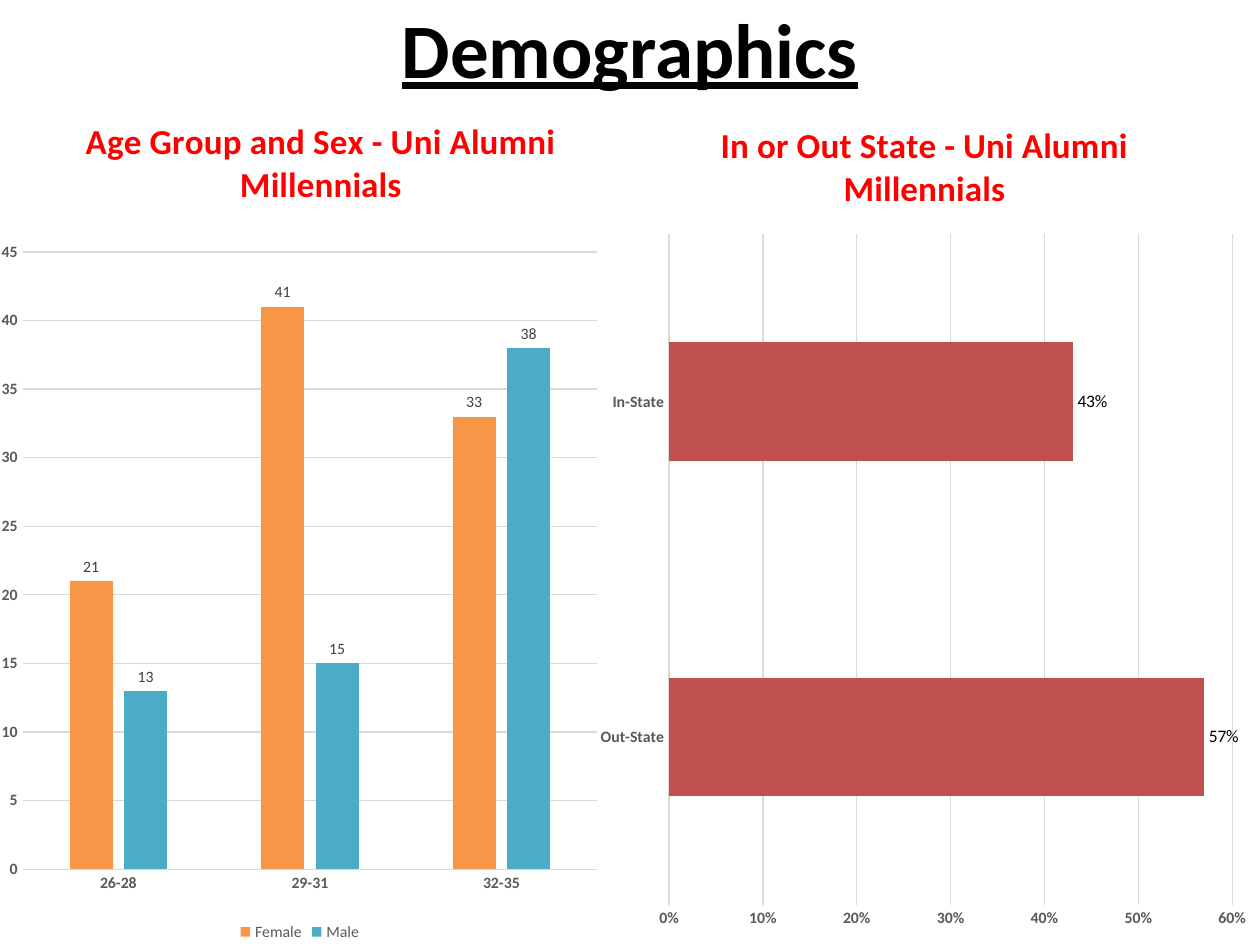
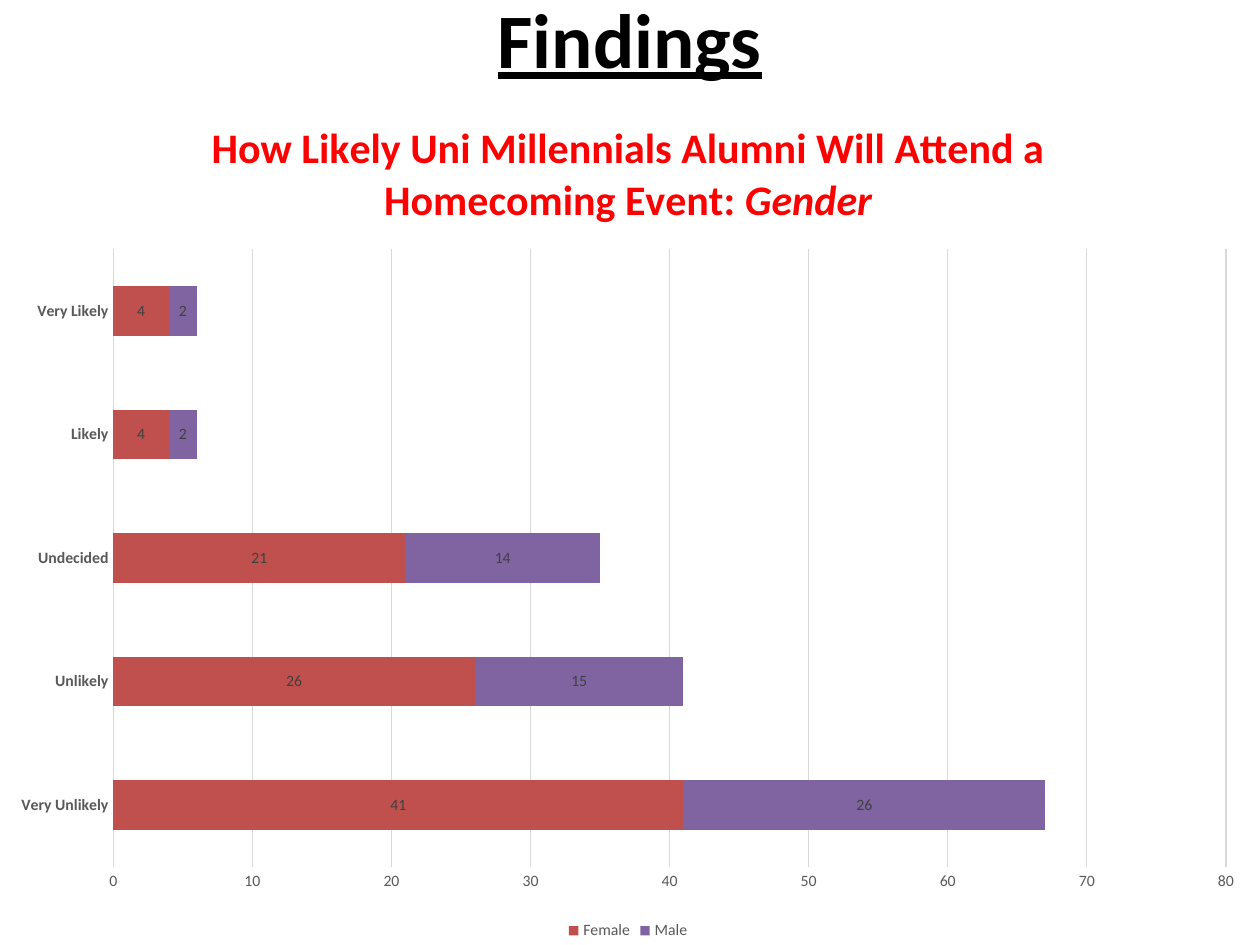
from lxml.etree import SubElement
from pptx import Presentation
from pptx.chart.data import CategoryChartData
from pptx.dml.color import RGBColor
from pptx.enum.chart import XL_CHART_TYPE as ChartType
from pptx.enum.chart import XL_LABEL_POSITION as LabelPosition
from pptx.enum.chart import XL_LEGEND_POSITION as LegendPosition
from pptx.enum.chart import XL_TICK_MARK as TickMark
from pptx.enum.text import MSO_ANCHOR as Anchor
from pptx.enum.text import PP_ALIGN as Align
from pptx.oxml.ns import qn
from pptx.util import Inches, Pt

FONT = "Calibri"
BLACK, RED, GRID = "000000", "FF0000", "D9D9D9"
AXIS_TEXT, LABEL_TEXT = "595959", "404040"
ORANGE, TEAL, BRICK, PURPLE = "F79646", "4BACC6", "C0504D", "8064A2"

HEADING = {"size": Pt(44), "bold": True, "underline": True}
AXIS = {"size": Pt(9), "bold": True}
SMALL = {"size": Pt(9), "bold": False}
BODY = {"size": Pt(10), "bold": False}


def rgb(hex_color):
    return RGBColor.from_string(hex_color)


def style_font(font, color, formats):
    for attribute, value in {"name": FONT, **formats}.items():
        setattr(font, attribute, value)
    font.color.rgb = rgb(color)


def style_line(line, color):
    line.color.rgb = rgb(color)
    line.width = Pt(0.75)


def add_heading(slide, text, top):
    frame = slide.shapes.add_textbox(
        Inches(0.5), Inches(top), Inches(9), Inches(1.25)
    ).text_frame
    frame.word_wrap = True
    frame.vertical_anchor = Anchor.MIDDLE
    paragraph = frame.paragraphs[0]
    paragraph.alignment = Align.CENTER
    run = paragraph.add_run()
    run.text = text
    style_font(run.font, BLACK, HEADING)


def set_layout(parent, index, values):
    for old in parent.findall(qn("c:layout")):
        parent.remove(old)
    layout = SubElement(parent, qn("c:layout"))
    manual = SubElement(layout, qn("c:manualLayout"))
    for tag, value in values.items():
        SubElement(manual, qn(f"c:{tag}")).set("val", str(value))
    parent.insert(index, layout)


def place_plot(chart, box, plot):
    left, top, width, height = box
    x, y, w, h = plot
    set_layout(chart.plots[0]._element.getparent(), 0, {
        "layoutTarget": "inner", "xMode": "edge", "yMode": "edge",
        "x": (x - left) / width, "y": (y - top) / height,
        "w": w / width, "h": h / height,
    })


def place_title(chart, box, corner):
    left, top, width, height = box
    set_layout(chart.chart_title._element, 1, {
        "xMode": "edge", "yMode": "edge",
        "x": (corner[0] - left) / width, "y": (corner[1] - top) / height,
    })


def add_chart_title(chart, text, size, emphasis=""):
    chart.has_title = True
    chart.chart_title.include_in_layout = False
    paragraph = chart.chart_title.text_frame.paragraphs[0]
    for part, italic in ((text, False), (emphasis, True)):
        if part:
            run = paragraph.add_run()
            run.text = part
            style_font(run.font, RED,
                       {"size": Pt(size), "bold": True, "italic": italic})


def style_axes(chart, maximum, step, number_format, value_font):
    for axis, formats in ((chart.category_axis, AXIS),
                          (chart.value_axis, value_font)):
        axis.major_tick_mark = axis.minor_tick_mark = TickMark.NONE
        style_font(axis.tick_labels.font, AXIS_TEXT, formats)
    style_line(chart.category_axis.format.line, GRID)
    chart.category_axis.has_major_gridlines = False

    scale = chart.value_axis
    scale.minimum_scale, scale.maximum_scale = 0, maximum
    scale.major_unit = step
    scale.format.line.fill.background()
    scale.has_major_gridlines = True
    style_line(scale.major_gridlines.format.line, GRID)
    scale.tick_labels.number_format = number_format
    scale.tick_labels.number_format_is_linked = False


def add_legend(chart):
    chart.has_legend = True
    chart.legend.position = LegendPosition.BOTTOM
    chart.legend.include_in_layout = False
    style_font(chart.legend.font, AXIS_TEXT, SMALL)


def add_bars(slide, kind, box, plot_box, categories, groups, gap, overlap,
             label_position, maximum, step, number_format="General",
             value_font=AXIS, label_color=LABEL_TEXT, label_font=SMALL):
    data = CategoryChartData(number_format=number_format)
    data.categories = categories
    for name, values, _ in groups:
        data.add_series(name, values)
    chart = slide.shapes.add_chart(kind, *map(Inches, box), data).chart
    style_font(chart.font, BLACK, BODY)
    style_axes(chart, maximum, step, number_format, value_font)
    place_plot(chart, box, plot_box)

    plot = chart.plots[0]
    plot.vary_by_categories = False
    plot.gap_width, plot.overlap = gap, overlap
    for series, (_, _, color) in zip(plot.series, groups):
        series.format.fill.solid()
        series.format.fill.fore_color.rgb = rgb(color)
        labels = series.data_labels
        labels.show_value = True
        labels.position = label_position
        labels.number_format = number_format
        labels.number_format_is_linked = False
        style_font(labels.font, label_color, label_font)

    chart.has_legend = False
    if len(groups) > 1:
        add_legend(chart)
    return chart


def add_age_chart(slide):
    box = (-0.08, 0.75, 4.92, 6.76)
    chart = add_bars(
        slide, ChartType.COLUMN_CLUSTERED, box, (0.18, 2, 4.56, 4.9),
        ["26-28", "29-31", "32-35"],
        [("Female", (21, 41, 33), ORANGE), ("Male", (13, 15, 38), TEAL)],
        219, -27, LabelPosition.OUTSIDE_END, 45, 5,
    )
    add_chart_title(chart, "Age Group and Sex - Uni Alumni Millennials", 20)
    place_title(chart, box, (0.63, 0.87))


def add_state_chart(slide):
    box = (4.67, 0.75, 5.33, 6.75)
    chart = add_bars(
        slide, ChartType.BAR_CLUSTERED, box,
        (5.31, 1.86, 4.47, 5.32), ["Out-State", "In-State"],
        [("Series 1", (0.57, 0.43), BRICK)],
        182, 0, LabelPosition.OUTSIDE_END, 0.6, 0.1, "0%",
        label_color=BLACK, label_font=BODY,
    )
    add_chart_title(chart, "In or Out State - Uni Alumni Millennials", 20)
    place_title(chart, box, (5.67, 0.9))


def add_attendance_chart(slide):
    chart = add_bars(
        slide, ChartType.BAR_STACKED, (-0.03, 0.75, 10.03, 6.75),
        (0.9, 1.98, 8.83, 4.9),
        ["Very Unlikely", "Unlikely", "Undecided", "Likely", "Very Likely"],
        [("Female", (41, 26, 21, 4, 4), BRICK),
         ("Male", (26, 15, 14, 2, 2), PURPLE)],
        150, 100, LabelPosition.CENTER, 80, 10, value_font=SMALL,
    )
    add_chart_title(
        chart,
        "How Likely Uni Millennials Alumni Will Attend a Homecoming Event: ",
        24, "Gender",
    )


def main():
    deck = Presentation()
    deck.slide_width, deck.slide_height = Inches(10), Inches(7.5)
    blank = deck.slide_layouts[6]

    demographics = deck.slides.add_slide(blank)
    add_heading(demographics, "Demographics", -0.25)
    add_age_chart(demographics)
    add_state_chart(demographics)

    findings = deck.slides.add_slide(blank)
    add_heading(findings, "Findings", -0.33)
    add_attendance_chart(findings)

    deck.save("out.pptx")


if __name__ == "__main__":
    main()
